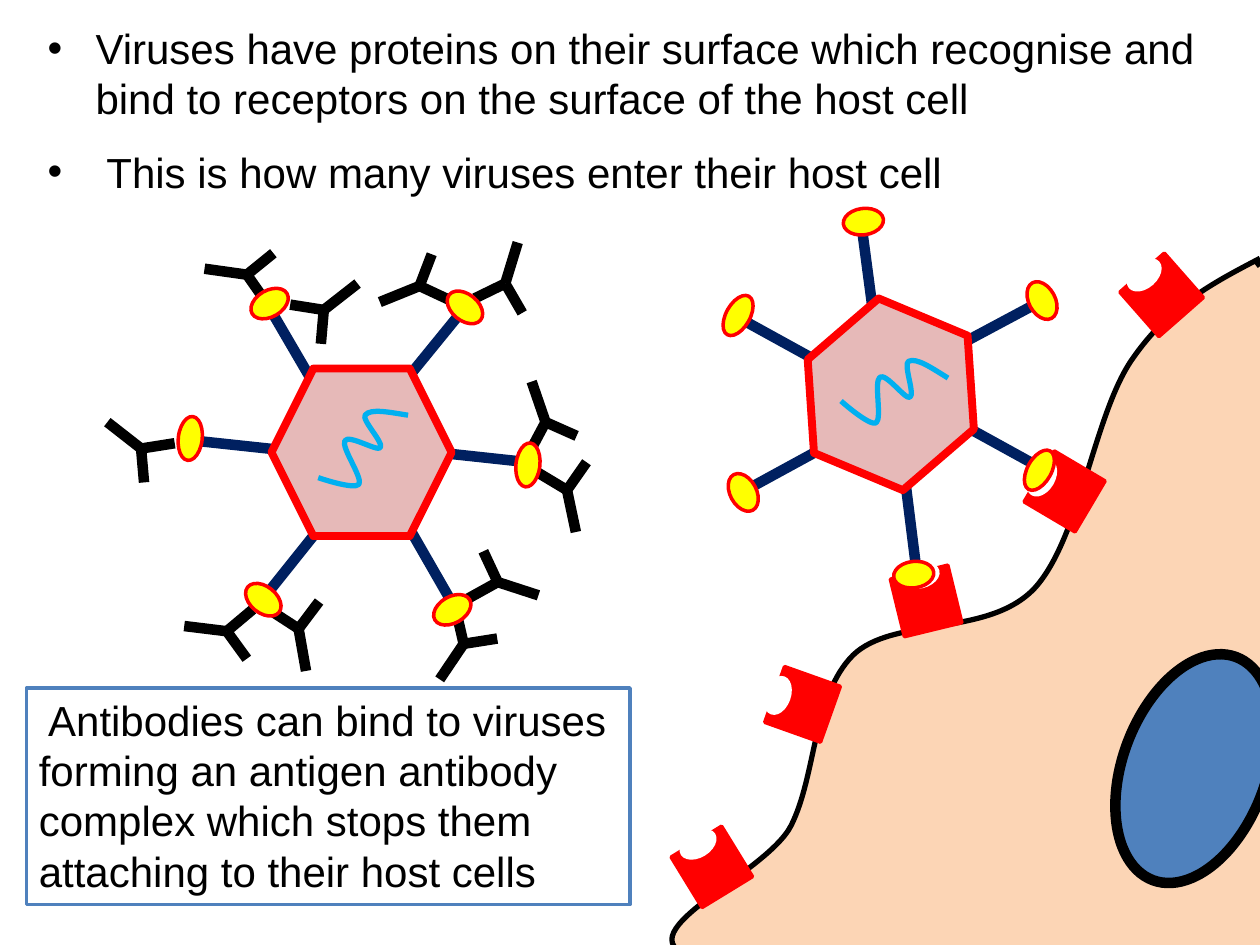
from dataclasses import dataclass
from math import cos, radians, sin

from lxml import etree
from pptx import Presentation
from pptx.dml.color import RGBColor
from pptx.enum.shapes import MSO_CONNECTOR, MSO_SHAPE
from pptx.enum.text import MSO_ANCHOR, MSO_AUTO_SIZE, PP_ALIGN
from pptx.oxml.ns import qn
from pptx.util import Inches, Pt

STRAIGHT = MSO_CONNECTOR.STRAIGHT
OVAL, SQUARE, HEXAGON = MSO_SHAPE.OVAL, MSO_SHAPE.RECTANGLE, MSO_SHAPE.HEXAGON
TOP, LEFT = MSO_ANCHOR.TOP, PP_ALIGN.LEFT
GROW = MSO_AUTO_SIZE.SHAPE_TO_FIT_TEXT


@dataclass(frozen=True)
class Theme:
    font: str = "Arial"
    text_size: float = 24
    thin: float = 2
    medium: float = 3
    wall: float = 4.5
    thick: float = 6
    black: str = "000000"
    white: str = "FFFFFF"
    red: str = "FF0000"
    yellow: str = "FFFF00"
    navy: str = "002060"
    pink: str = "E6B9B8"
    cyan: str = "00B0F0"
    peach: str = "FCD5B5"
    blue: str = "4F81BD"


THEME = Theme()

# Antibody: hinge and direction of its stem, in degrees
ANTIBODIES = [
    ((3.33, 2.27), 158), ((1.8, 5.01), 187), ((3.68, 5.11), 124),
    ((2.57, 2.46), -38), ((4.5, 3.89), 78), ((1.12, 3.56), 218),
    ((4.01, 2.25), -73), ((1.96, 2.18), 188), ((4.33, 3.35), 251),
    ((3.95, 4.62), 18), ((2.37, 4.99), 80),
]
# Length of each antibody part and its turn from the stem
ANTIBODY_PARTS = [(0.27, 133), (0.27, 227), (0.34, 0)]

# Spike, measured from the virus centre: foot, tip, knob centre, knob size, turn
WIDE_KNOB, LONG_KNOB = (0.32, 0.21), (0.35, 0.19)
SPIKES = [
    ((0.34, -0.56), (0.78, -1.1), (0.82, -1.15), WIDE_KNOB, 39.1),
    ((-0.3, 0.56), (-0.74, 1.11), (-0.78, 1.17), WIDE_KNOB, 39.1),
    ((0.59, 0), (1.24, 0.07), (1.32, 0.1), LONG_KNOB, 96.6),
    ((-0.65, -0.02), (-1.3, -0.09), (-1.36, -0.11), LONG_KNOB, 96.6),
    ((-0.36, -0.51), (-0.71, -1.11), (-0.73, -1.18), WIDE_KNOB, -30.1),
    ((0.36, 0.57), (0.71, 1.18), (0.72, 1.25), WIDE_KNOB, -30.1),
]
# Curves: start point, then two control points and an end point per bend
STRAND = [
    (0.1, -0.42), (-0.03, -0.34), (-0.16, -0.27), (-0.16, -0.2),
    (-0.16, -0.15), (0.1, -0.13), (0.1, -0.08), (0.1, -0.04),
    (-0.16, 0), (-0.15, 0.06), (-0.14, 0.12), (0.15, 0.19),
    (0.16, 0.25), (0.16, 0.31), (-0.12, 0.42), (-0.12, 0.42),
]
CELL = [
    (10, 2.05), (9.64, 2.24), (9.28, 2.42), (8.98, 2.86),
    (8.68, 3.3), (8.57, 4.28), (8.21, 4.67), (7.84, 5.06),
    (7.09, 4.89), (6.77, 5.2), (6.45, 5.52), (6.48, 6.15),
    (6.28, 6.55), (6.08, 6.95), (4.84, 7.44), (5.55, 7.61),
    (6.26, 7.78), (9.66, 8.41), (10.52, 7.56), (11.37, 6.72),
    (10.78, 3.44), (10.68, 2.53), (10.59, 1.62), (10.28, 1.87),
    (9.97, 2.11),
]
RECEPTORS = [
    ((5.65, 6.88), 328.5), ((6.37, 5.59), 289.6), ((7.35, 4.77), 346.3),
    ((8.45, 3.9), 300.6), ((9.22, 2.34), 318.7),
]


def place(centre, offset, turn):
    """Turn an offset by some degrees and add it to a centre."""
    angle = radians(turn)
    x, y = offset
    return (centre[0] + x * cos(angle) - y * sin(angle),
            centre[1] + x * sin(angle) + y * cos(angle))


def paint(shape, fill=None, line=None, width=0):
    shape.shadow.inherit = False
    if fill:
        shape.fill.solid()
        shape.fill.fore_color.rgb = RGBColor.from_string(fill)
    else:
        shape.fill.background()
    if line:
        shape.line.color.rgb = RGBColor.from_string(line)
        shape.line.width = Pt(width)
    else:
        shape.line.fill.background()


def add_line(group, start, end, color):
    line = group.shapes.add_connector(
        STRAIGHT, *[Inches(value) for value in (*start, *end)])
    line.line.color.rgb = RGBColor.from_string(color)
    line.line.width = Pt(THEME.thick)
    etree.SubElement(line._element.spPr, qn("a:effectLst"))


def add_centred(group, kind, centre, size, turn, *colours):
    width, height = size
    shape = group.shapes.add_shape(
        kind, Inches(centre[0] - width / 2), Inches(centre[1] - height / 2),
        Inches(width), Inches(height))
    shape.rotation = turn % 360
    paint(shape, *colours)


def add_curve(group, points, turn, *colours):
    """Draw a freeform whose points are joined by cubic curves."""
    corners = [(Inches(x), Inches(y)) for x, y in points]
    builder = group.shapes.build_freeform(*corners[0], scale=1.0)
    builder.add_line_segments(corners[1:], close=False)
    shape = builder.convert_to_shape()
    outline = shape._element.find(".//" + qn("a:path"))
    steps = outline.findall(qn("a:lnTo"))
    for first in range(0, len(steps), 3):
        bend = etree.SubElement(outline, qn("a:cubicBezTo"))
        for step in steps[first:first + 3]:
            bend.append(step[0])
            outline.remove(step)
    shape.rotation = turn
    paint(shape, *colours)


def add_antibody(page, hinge, direction):
    group = page.shapes.add_group_shape()
    for length, turn in ANTIBODY_PARTS:
        tip = place(hinge, (length, 0), direction + turn)
        add_line(group, hinge, tip, THEME.black)


def add_virus(page, centre, turn):
    group = page.shapes.add_group_shape()
    for foot, tip, knob, size, knob_turn in SPIKES:
        add_line(group, place(centre, foot, turn), place(centre, tip, turn), THEME.navy)
        add_centred(group, OVAL, place(centre, knob, turn), size, knob_turn + turn,
                    THEME.yellow, THEME.red, THEME.thin)
    add_centred(group, HEXAGON, centre, (1.43, 1.33), turn,
                THEME.pink, THEME.red, THEME.wall)
    x, y = place(centre, (0.02, -0.04), turn)
    add_curve(group, [(x + dx, y + dy) for dx, dy in STRAND], 40.5 + turn,
              None, THEME.cyan, THEME.medium)


def add_host_cell(page):
    group = page.shapes.add_group_shape()
    add_curve(group, CELL, 0, THEME.peach, THEME.black, THEME.medium)
    add_centred(group, OVAL, (9.48, 6.1), (1.14, 1.89), 20.4,
                THEME.blue, THEME.black, THEME.thick)
    for centre, turn in RECEPTORS:
        add_centred(group, SQUARE, centre, (0.47, 0.47), turn,
                    THEME.red, THEME.red, THEME.thin)
        add_centred(group, OVAL, place(centre, (0, -0.21), turn), WIDE_KNOB, turn,
                    THEME.white)


def write_text(box, text):
    frame = box.text_frame
    frame.text = text
    frame.word_wrap = True
    frame.auto_size = GROW
    frame.vertical_anchor = TOP
    para = frame.paragraphs[0]
    para.alignment = LEFT
    font = para.runs[0].font
    font.name, font.size = THEME.font, Pt(THEME.text_size)
    font.color.rgb = RGBColor.from_string(THEME.black)
    return para


def add_bullet(page, top, height, text):
    box = page.shapes.add_textbox(Inches(0.28), Inches(top), Inches(9.45), Inches(height))
    properties = write_text(box, text)._p.get_or_add_pPr()
    properties.set("marL", str(Inches(0.38)))
    properties.set("indent", str(-Inches(0.38)))
    etree.SubElement(properties, qn("a:buFont")).set("typeface", THEME.font)
    etree.SubElement(properties, qn("a:buChar")).set("char", "•")


def add_caption(page, text):
    box = page.shapes.add_shape(
        SQUARE, Inches(0.21), Inches(5.46), Inches(4.79), Inches(1.72))
    paint(box, THEME.white, THEME.blue, THEME.thin)
    write_text(box, text)


def main():
    deck = Presentation()
    deck.slide_width, deck.slide_height = Inches(10), Inches(7.5)
    page = deck.slides.add_slide(deck.slide_layouts[6])
    for hinge, direction in ANTIBODIES:
        add_antibody(page, hinge, direction)
    add_virus(page, (2.87, 3.59), 0)
    add_host_cell(page)
    add_virus(page, (7.07, 3.13), 22.7)
    add_bullet(page, 0.13, 0.91, "Viruses have proteins on their surface which recognise "
               "and bind to receptors on the surface of the host cell")
    add_bullet(page, 1.11, 0.5, " This is how many viruses enter their host cell")
    add_caption(page, " Antibodies can bind to viruses forming an antigen antibody "
                "complex which stops them attaching to their host cells")
    deck.save("out.pptx")


if __name__ == "__main__":
    main()
